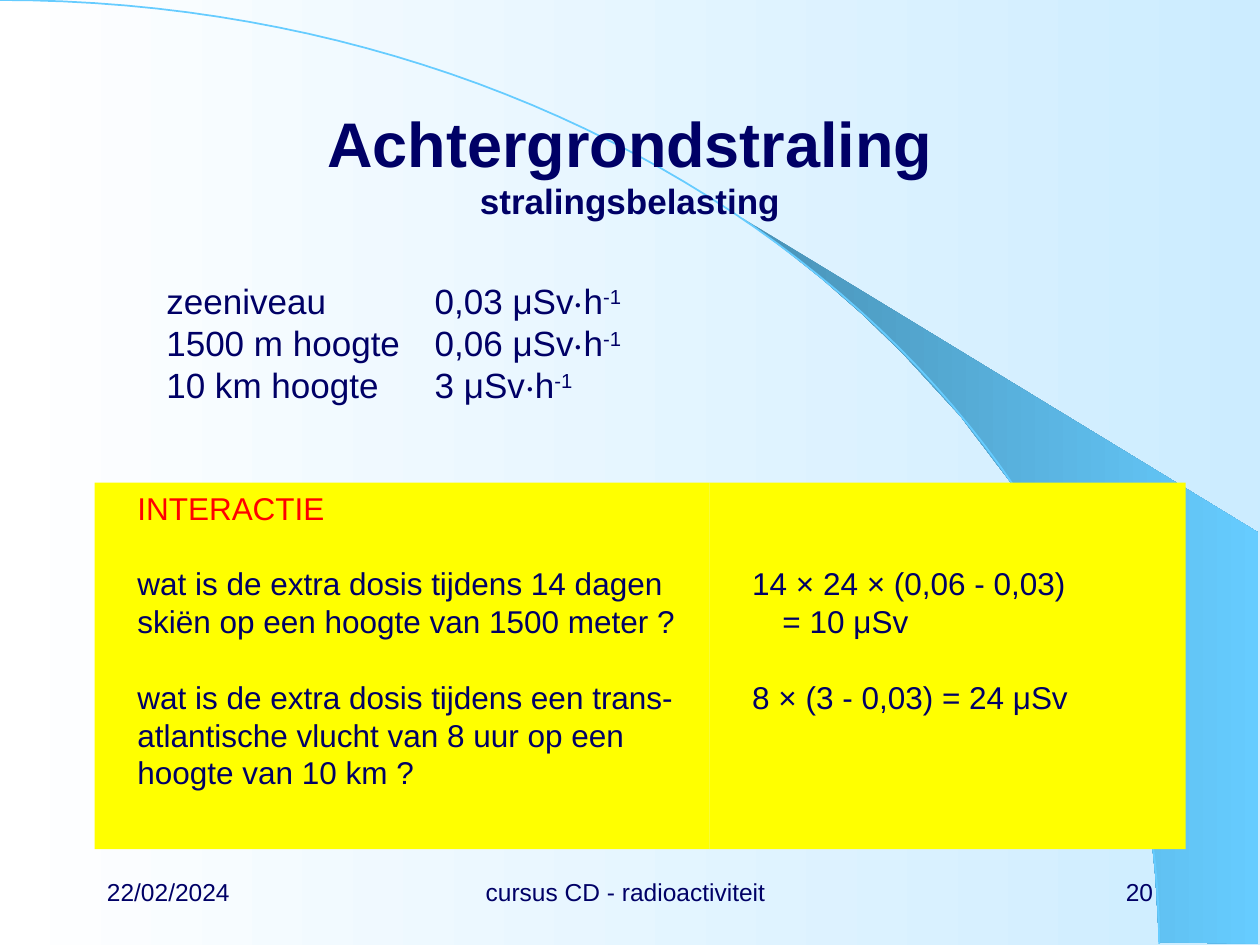
from pptx import Presentation
from pptx.dml.color import RGBColor
from pptx.enum.shapes import MSO_SHAPE
from pptx.enum.text import MSO_ANCHOR, MSO_AUTO_SIZE, PP_ALIGN
from pptx.util import Inches, Pt

LEFT, CENTER, RIGHT = PP_ALIGN.LEFT, PP_ALIGN.CENTER, PP_ALIGN.RIGHT
TOP, MIDDLE = MSO_ANCHOR.TOP, MSO_ANCHOR.MIDDLE
RECTANGLE = MSO_SHAPE.RECTANGLE
TITLE_ONLY = 5

COLORS = {"navy": "000066", "red": "FF0000", "yellow": "FFFF00", "sky": "66CCFF",
          "steel": "4992B6", "white": "FFFFFF", "pale": "CCECFF"}
FONT, DOT_FONT = "Arial", "TeX Gyre Schola"
LINE_RATIO = 1.2

WEDGE = [(9.2, 7.48), (9.99, 7.49), (9.99, 4.23), (5.89, 1.73), (6.24, 1.99),
         (6.53, 2.22), (6.85, 2.5), (7.16, 2.8), (7.62, 3.3), (8.03, 3.84),
         (8.32, 4.31), (8.58, 4.79), (8.78, 5.28), (8.93, 5.72), (9.03, 6.09),
         (9.13, 6.56), (9.17, 6.96)]
ARC = [(0, 0), (5.08, 0), (9.2, 3.35), (9.2, 7.49)]
ARC_STEPS = 60

DOSE_RATES = [("zeeniveau", "0,03"), ("1500 m hoogte", "0,06"), ("10 km hoogte", "3")]
# Each entry: text, colour, blank lines before, extra indent
QUESTIONS = [
    ("INTERACTIE", "red", 0, 0),
    ("wat is de extra dosis tijdens 14 dagen skiën op een hoogte van 1500 meter ?",
     "navy", 1, 0),
    ("wat is de extra dosis tijdens een trans-atlantische vlucht van 8 uur op een "
     "hoogte van 10 km ?", "navy", 1, 0),
]
ANSWERS = [
    ("14 × 24 × (0,06 - 0,03)", "navy", 0, 0),
    ("= 10 μSv", "navy", 0, 0.24),
    ("8 × (3 - 0,03) = 24 μSv", "navy", 1, 0),
]


def rgb(name):
    return RGBColor.from_string(COLORS[name])


def set_gradient(fill, start, end):
    fill.gradient()
    fill.gradient_angle = 0
    for stop, position, color in zip(fill.gradient_stops, (0, 1), (start, end)):
        stop.position = position
        stop.color.rgb = rgb(color)


def set_font(font, size, color="navy", bold=False):
    font.name, font.size, font.bold = FONT, Pt(size), bold
    font.color.rgb = rgb(color)


def set_frame(frame, anchor, left=0.1, top=0.05):
    frame.word_wrap = True
    frame.auto_size = MSO_AUTO_SIZE.NONE
    frame.vertical_anchor = anchor
    frame.margin_left, frame.margin_top = Inches(left), Inches(top)
    frame.margin_right, frame.margin_bottom = Inches(0.1), Inches(0.05)


def place(box):
    return [Inches(length) for length in box]


def paragraphs(frame, count):
    return [frame.paragraphs[0]] + [frame.add_paragraph() for _ in range(count - 1)]


def curve_point(t):
    weights = ((1 - t) ** 3, 3 * t * (1 - t) ** 2, 3 * t * t * (1 - t), t ** 3)
    return tuple(sum(w * p[axis] for w, p in zip(weights, ARC)) for axis in (0, 1))


def add_outline(slide, points, close):
    """Add a freeform through points given in inches."""
    builder = slide.shapes.build_freeform(*place(points[0]))
    builder.add_line_segments([place(p) for p in points[1:]], close=close)
    outline = builder.convert_to_shape()
    outline.shadow.inherit = False
    return outline


def add_backdrop(slide):
    set_gradient(slide.background.fill, "white", "pale")
    wedge = add_outline(slide, WEDGE, True)
    set_gradient(wedge.fill, "steel", "sky")
    wedge.line.fill.background()
    arc = add_outline(slide, [curve_point(i / ARC_STEPS) for i in range(ARC_STEPS + 1)],
                      False)
    arc.fill.background()
    arc.line.color.rgb = rgb("sky")
    arc.line.width = Pt(1)


def add_title(slide, box, heading, subheading):
    title = slide.shapes.title
    title.left, title.top, title.width, title.height = place(box)
    set_frame(title.text_frame, MIDDLE)
    paragraph = title.text_frame.paragraphs[0]
    paragraph.alignment = CENTER
    set_font(paragraph.font, 36, bold=True)
    for text, size in ((heading, 36), (subheading, 20)):
        if paragraph.runs:
            paragraph.add_line_break()
        run = paragraph.add_run()
        run.text = text
        set_font(run.font, size, bold=True)
    # The title lies in front of the backdrop
    slide.shapes._spTree.append(title._element)


def add_dose_rates(slide, box):
    frame = slide.shapes.add_textbox(*place(box)).text_frame
    set_frame(frame, TOP, left=0.57)
    for paragraph, (level, rate) in zip(paragraphs(frame, len(DOSE_RATES)), DOSE_RATES):
        set_font(paragraph.font, 20)
        paragraph.line_spacing = Pt(20 * LINE_RATIO)
        tabs = paragraph._p.get_or_add_pPr().makeelement(
            "{http://schemas.openxmlformats.org/drawingml/2006/main}tabLst", {})
        stop = tabs.makeelement(
            "{http://schemas.openxmlformats.org/drawingml/2006/main}tab",
            {"pos": str(Inches(2.13)), "algn": "l"})
        tabs.append(stop)
        paragraph._p.pPr.find("{*}defRPr").addprevious(tabs)
        for text in (f"{level}\t{rate} μSv", "·", "h", "-1"):
            run = paragraph.add_run()
            run.text = text
            set_font(run.font, 20)
            if text == "·":
                run.font.name = DOT_FONT
            elif text == "-1":
                run.font._element.set("baseline", "30000")


def add_panel(slide, box, entries, lines_above=0):
    """Add a yellow panel whose text starts a number of lines down."""
    size = 18
    line = size * LINE_RATIO
    panel = slide.shapes.add_shape(RECTANGLE, *place(box))
    panel.shadow.inherit = False
    panel.fill.solid()
    panel.fill.fore_color.rgb = rgb("yellow")
    panel.line.fill.background()
    frame = panel.text_frame
    set_frame(frame, TOP, left=0.34, top=0.05 + lines_above * line / 72)
    for paragraph, entry in zip(paragraphs(frame, len(entries)), entries):
        text, color, blank_lines, indent = entry
        paragraph.text = text
        paragraph.alignment = LEFT
        paragraph.line_spacing = Pt(line)
        paragraph.space_before = Pt(blank_lines * line)
        paragraph._p.get_or_add_pPr().set("marL", str(Inches(indent)))
        set_font(paragraph.font, size, color)
        set_font(paragraph.runs[0].font, size, color)


def add_footer(slide, top, height):
    for left, width, text, alignment in ((0.75, 2.08, "22/02/2024", LEFT),
                                         (2.8, 4.33, "cursus CD - radioactiviteit", CENTER),
                                         (7.17, 2.08, "20", RIGHT)):
        frame = slide.shapes.add_textbox(*place((left, top, width, height))).text_frame
        set_frame(frame, MIDDLE)
        paragraph = frame.paragraphs[0]
        paragraph.text = text
        paragraph.alignment = alignment
        set_font(paragraph.font, 14)
        set_font(paragraph.runs[0].font, 14)


def main():
    deck = Presentation()
    deck.slide_width, deck.slide_height = Inches(10), Inches(7.5)
    slide = deck.slides.add_slide(deck.slide_layouts[TITLE_ONLY])
    add_backdrop(slide)
    add_footer(slide, 6.83, 0.5)
    add_title(slide, (0.75, 0.67, 8.5, 1.25), "Achtergrondstraling", "stralingsbelasting")
    add_dose_rates(slide, (0.75, 2.17, 8.49, 1.25))
    add_panel(slide, (0.75, 3.83, 4.88, 2.91), QUESTIONS)
    add_panel(slide, (5.63, 3.83, 3.78, 2.91), ANSWERS, lines_above=2)
    deck.save("out.pptx")


if __name__ == "__main__":
    main()
